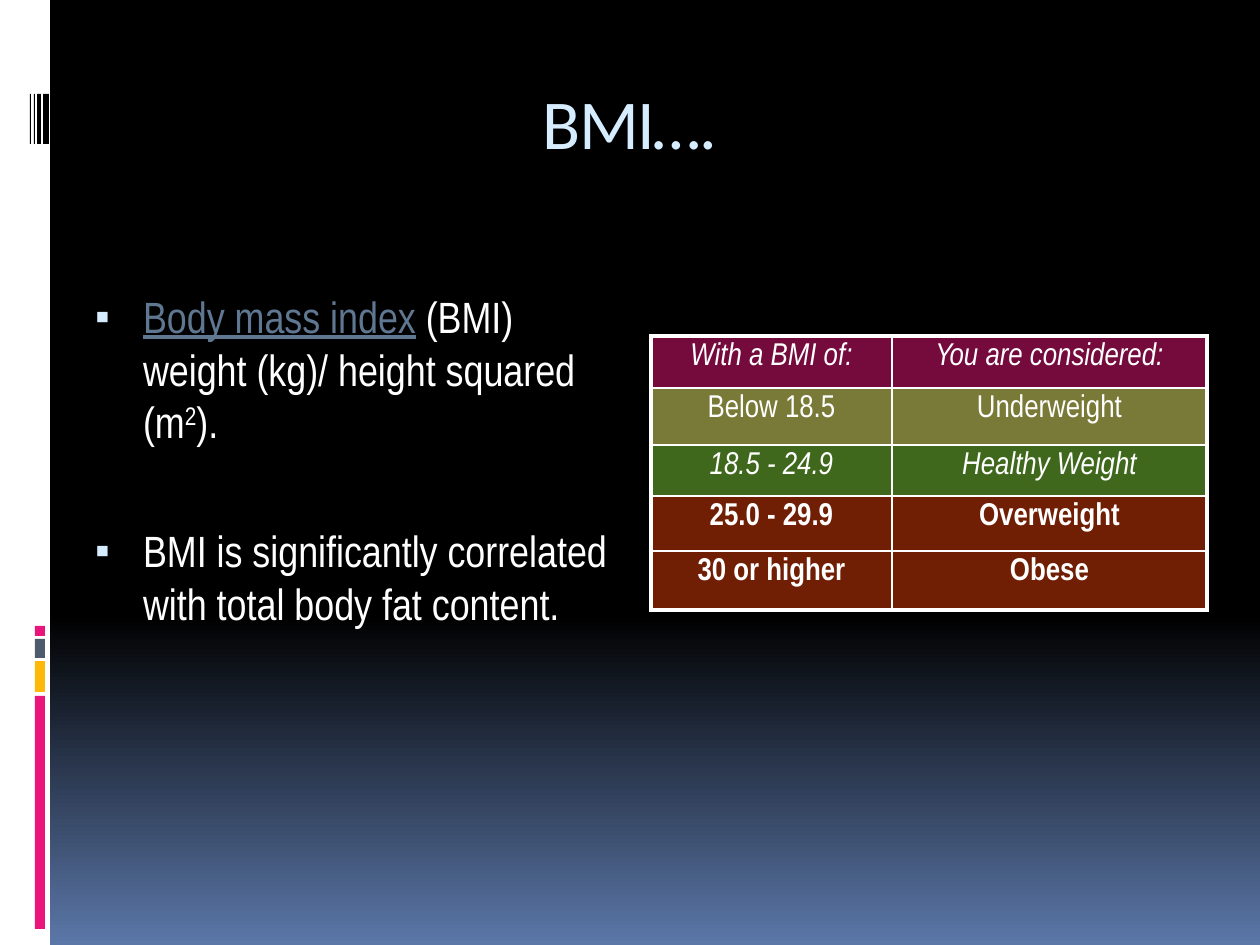
from lxml import etree
from pptx import Presentation
from pptx import util as u
from pptx.dml.color import RGBColor
from pptx.enum import shapes, text
from pptx.oxml import ns

PX_PER_INCH = 126

BLACK = RGBColor(0x00, 0x00, 0x00)
WHITE = RGBColor(0xFF, 0xFF, 0xFF)
DUSK_BLUE = RGBColor(0x5B, 0x77, 0xA8)
ICE_BLUE = RGBColor(0xD6, 0xEC, 0xFF)
TERM_BLUE = RGBColor(0x5F, 0x77, 0x91)
PINK = RGBColor(0xEA, 0x15, 0x7A)
AMBER = RGBColor(0xFE, 0xB8, 0x0A)
SLATE = RGBColor(0x4E, 0x5B, 0x6F)
YELLOW = RGBColor(0xF5, 0xF5, 0x71)
GREEN = RGBColor(0x7F, 0xD1, 0x3B)
RED = RGBColor(0xE1, 0x3C, 0x09)

TITLE_FONT = "Calibri"
BODY_FONT = "Arial Narrow"

# Colour, left, top, width, height
SIDEBAR = [
    (WHITE, 0, 0, 50, 945),
    (PINK, 35, 696, 10, 233),
    (AMBER, 35, 661, 10, 31),
    (SLATE, 35, 639, 10, 19),
    (PINK, 35, 626, 10, 10),
]
BARCODE = [(43, 6), (37, 4), (34, 1), (30, 1)]  # left, width

COLUMN_WIDTHS = [241, 315]
# Range, category, fill, row height, italic, bold
BMI_ROWS = [
    ("With a BMI of:", "You are considered:", PINK, 52, True, False),
    ("Below 18.5", "Underweight", YELLOW, 57, False, False),
    ("18.5 - 24.9", "Healthy Weight", GREEN, 51, True, False),
    ("25.0 - 29.9", "Overweight", RED, 55, False, True),
    ("30 or higher", "Obese", RED, 59, False, True),
]


def px(length):
    return u.Emu(round(length * 914400 / PX_PER_INCH))


def set_background(slide):
    fill = slide.background.fill
    fill.gradient()
    fill.gradient_angle = 270
    for stop, color, position in zip(fill.gradient_stops, (BLACK, DUSK_BLUE), (0.65, 1)):
        stop.color.rgb = color
        stop.position = position


def add_bar(slide, color, left, top, width, height):
    bar = slide.shapes.add_shape(
        shapes.MSO_SHAPE.RECTANGLE, px(left), px(top), px(width), px(height))
    bar.shadow.inherit = False
    bar.fill.solid()
    bar.fill.fore_color.rgb = color
    bar.line.fill.background()


def add_text_frame(slide, left, top, width, height):
    box = slide.shapes.add_textbox(px(left), px(top), px(width), px(height))
    box.text_frame.word_wrap = True
    box.text_frame.vertical_anchor = text.MSO_ANCHOR.TOP
    return box.text_frame


def add_run(para, words, size, font=BODY_FONT, color=WHITE):
    span = para.add_run()
    span.text = words
    span.font.size = u.Pt(size)
    span.font.name = font
    span.font.color.rgb = color
    return span


def set_bullet(para):
    props = para._p.get_or_add_pPr()
    props.set("marL", str(u.Inches(0.45)))
    props.set("indent", str(u.Inches(-0.38)))
    color = etree.SubElement(props, ns.qn("a:buClr"))
    etree.SubElement(color, ns.qn("a:srgbClr"), val=str(ICE_BLUE))
    etree.SubElement(props, ns.qn("a:buSzPct"), val="95000")
    etree.SubElement(props, ns.qn("a:buFont"), typeface="Arial")
    etree.SubElement(props, ns.qn("a:buChar"), char="▪")


def add_title(slide):
    para = add_text_frame(slide, 63, 73, 1134, 158).paragraphs[0]
    para.alignment = text.PP_ALIGN.CENTER
    span = add_run(para, "BMI….", 40, TITLE_FONT, ICE_BLUE)
    span.font._element.set("spc", "-100")


def add_body(slide):
    frame = add_text_frame(slide, 74, 284, 557, 399)
    definition = frame.paragraphs[0]
    definition.space_before = u.Pt(7)
    set_bullet(definition)
    add_run(definition, "Body mass index", 25, color=TERM_BLUE).font.underline = True
    add_run(definition, " (BMI) weight (kg)/ height squared (m", 25)
    add_run(definition, "2", 25).font._element.set("baseline", "30000")
    add_run(definition, ").", 25)

    correlation = frame.add_paragraph()
    correlation.space_before = u.Pt(43.5)
    set_bullet(correlation)
    add_run(correlation, "BMI is significantly correlated with total body fat content.", 25)


def fill_half_transparent(cell, color):
    cell.fill.solid()
    cell.fill.fore_color.rgb = color
    tint = cell._tc.tcPr.find(".//" + ns.qn("a:srgbClr"))
    etree.SubElement(tint, ns.qn("a:alpha"), val="50000")


def set_borders(cell, widths):
    """Widths in points: left, right, top, bottom."""
    for index, (side, width) in enumerate(zip("LRTB", widths)):
        line = etree.Element(ns.qn("a:ln" + side), w=str(u.Pt(width)))
        solid = etree.SubElement(line, ns.qn("a:solidFill"))
        etree.SubElement(solid, ns.qn("a:srgbClr"), val=str(WHITE))
        cell._tc.tcPr.insert(index, line)


def add_bmi_table(slide):
    row_count, column_count = len(BMI_ROWS), len(COLUMN_WIDTHS)
    heights = [row[3] for row in BMI_ROWS]
    table = slide.shapes.add_table(
        row_count, column_count, px(651), px(336),
        px(sum(COLUMN_WIDTHS)), px(sum(heights))).table
    table.first_row = table.horz_banding = False
    for column, width in zip(table.columns, COLUMN_WIDTHS):
        column.width = px(width)

    for r, (bmi, category, color, height, italic, bold) in enumerate(BMI_ROWS):
        table.rows[r].height = px(height)
        for c, words in enumerate((bmi, category)):
            cell = table.cell(r, c)
            cell.margin_top, cell.margin_bottom = px(7), px(4)
            para = cell.text_frame.paragraphs[0]
            para.alignment = text.PP_ALIGN.CENTER
            span = add_run(para, words, 18)
            span.font.italic = italic
            span.font.bold = bold
            fill_half_transparent(cell, color)
            # Thick outer frame, thin inner lines
            outer = (c == 0, c == column_count - 1, r == 0, r == row_count - 1)
            set_borders(cell, [2.25 if edge else 1 for edge in outer])


def main():
    deck = Presentation()
    deck.slide_width, deck.slide_height = px(1260), px(945)
    page = deck.slides.add_slide(deck.slide_layouts[6])
    set_background(page)

    # Sidebar decoration
    for bar in SIDEBAR:
        add_bar(page, *bar)
    for left, width in BARCODE:
        add_bar(page, BLACK, left, 94, width, 50)

    # Content
    add_title(page)
    add_body(page)
    add_bmi_table(page)
    deck.save("out.pptx")


if __name__ == "__main__":
    main()
